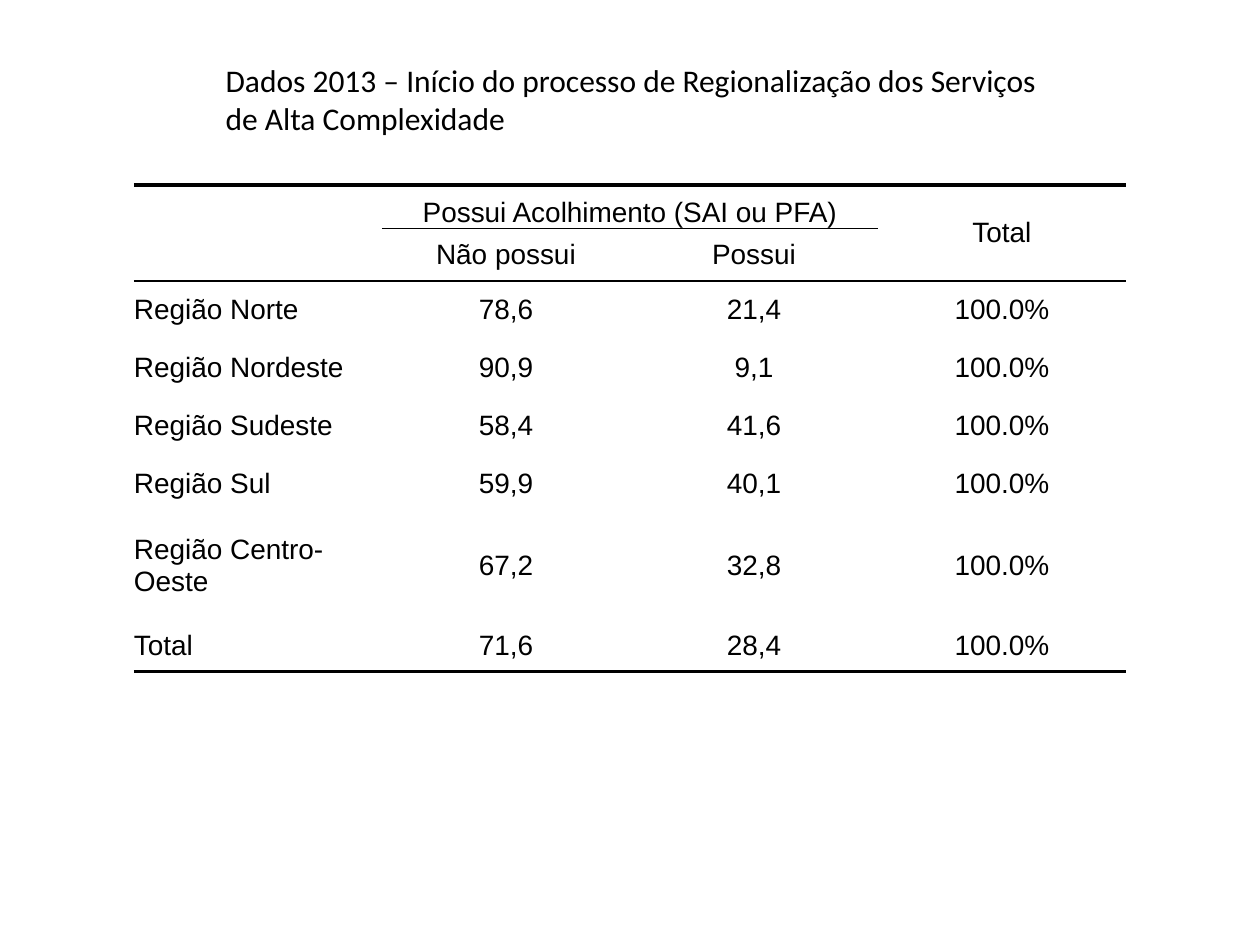
from lxml import etree
from pptx import Presentation
from pptx.dml.color import RGBColor
from pptx.enum.text import MSO_ANCHOR, MSO_AUTO_SIZE, PP_ALIGN
from pptx.oxml.ns import qn
from pptx.util import Pt

PX = 914400 / 126
BLACK = RGBColor(0, 0, 0)
LEFT, CENTER = PP_ALIGN.LEFT, PP_ALIGN.CENTER
TOP, MIDDLE, BOTTOM = MSO_ANCHOR.TOP, MSO_ANCHOR.MIDDLE, MSO_ANCHOR.BOTTOM
FIT_SHAPE = MSO_AUTO_SIZE.SHAPE_TO_FIT_TEXT

TITLE = "Dados 2013 – Início do processo de Regionalização dos Serviços de Alta Complexidade"
ROWS = [
    ("", "Possui Acolhimento (SAI ou PFA)", "", "Total"),
    ("", "Não possui", "Possui", ""),
    ("Região Norte", "78,6", "21,4", "100.0%"),
    ("Região Nordeste", "90,9", "9,1", "100.0%"),
    ("Região Sudeste", "58,4", "41,6", "100.0%"),
    ("Região Sul", "59,9", "40,1", "100.0%"),
    ("Região Centro-Oeste", "67,2", "32,8", "100.0%"),
    ("Total", "71,6", "28,4", "100.0%"),
]
ROW_HEIGHTS = [43, 53, 58, 58, 58, 58, 106, 53]
MERGES = [((0, 0), (1, 0)), ((0, 1), (0, 2)), ((0, 3), (1, 3))]
HEADER_COLUMNS = (1, 2)
RULES = {0: 2, 2: 1, len(ROWS): 2}


def px(length):
    """Turn pixels into EMU."""
    return round(length * PX)


def format_text(paragraph, font_name, size, alignment):
    """Set the font and alignment of one paragraph."""
    paragraph.alignment = alignment
    paragraph.font.name = font_name
    paragraph.font.size = Pt(size)
    paragraph.font.bold = False
    paragraph.font.color.rgb = BLACK


def rule_width(edge, column):
    """Return the width in points of the rule on a row edge, or zero."""
    if edge == 1 and column in HEADER_COLUMNS:
        return 0.5
    return RULES.get(edge, 0)


def set_border(cell, side, width):
    """Draw one side of a cell, or clear it when the width is zero."""
    properties = cell._tc.get_or_add_tcPr()
    line = etree.SubElement(properties, qn(f"a:ln{side}"), w=str(Pt(width)))
    if width:
        fill = etree.SubElement(line, qn("a:solidFill"))
        etree.SubElement(fill, qn("a:srgbClr"), val=str(BLACK))
    else:
        etree.SubElement(line, qn("a:noFill"))


def add_title(slide, left, top, width, height):
    """Place and format the title placeholder."""
    title = slide.shapes.title
    title.left, title.top = px(left), px(top)
    title.width, title.height = px(width), px(height)
    frame = title.text_frame
    frame.text = TITLE
    frame.word_wrap = True
    frame.auto_size = FIT_SHAPE
    frame.vertical_anchor = TOP
    paragraph = frame.paragraphs[0]
    format_text(paragraph, "Calibri", 18, LEFT)
    paragraph.line_spacing = 1.0
    paragraph.space_before = Pt(0)


def fill_cell(cell, text, row, column):
    """Write one cell with its alignment, rules and clear background."""
    cell.text = text
    cell.margin_left = cell.margin_right = cell.margin_top = cell.margin_bottom = 0
    cell.vertical_anchor = BOTTOM if (row, column) == (0, 1) else MIDDLE
    format_text(cell.text_frame.paragraphs[0], "Arial", 16, CENTER if column else LEFT)
    widths = {"L": 0, "R": 0, "T": rule_width(row, column), "B": rule_width(row + 1, column)}
    for side, width in widths.items():
        set_border(cell, side, width)
    cell.fill.background()


def add_region_table(slide, left, top, width):
    """Add the table of regions with its two-level header."""
    column_count = len(ROWS[0])
    frame = slide.shapes.add_table(
        len(ROWS), column_count, px(left), px(top), px(width), px(sum(ROW_HEIGHTS))
    )
    table = frame.table
    table.first_row = table.horz_banding = False
    for column in table.columns:
        column.width = px(width / column_count)
    for row, height in enumerate(ROW_HEIGHTS):
        table.rows[row].height = px(height)
        for column, text in enumerate(ROWS[row]):
            fill_cell(table.cell(row, column), text, row, column)
    for first, last in MERGES:
        table.cell(*first).merge(table.cell(*last))


def main():
    """Build and save the presentation."""
    presentation = Presentation()
    presentation.slide_width, presentation.slide_height = px(1260), px(945)
    slide = presentation.slides.add_slide(presentation.slide_layouts[5])
    add_region_table(slide, 134, 185, 992)
    add_title(slide, 213, 55, 873, 89)
    presentation.save("out.pptx")


if __name__ == "__main__":
    main()
